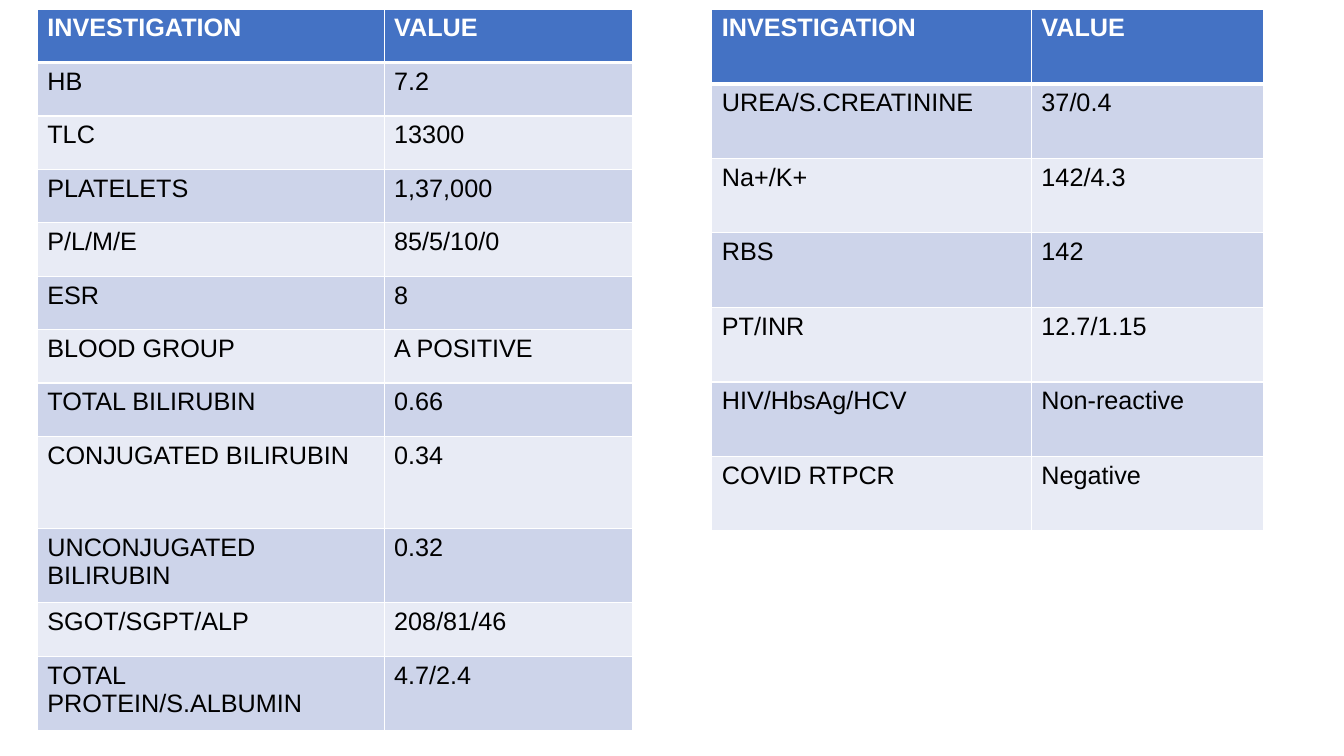
from lxml import etree
from pptx import Presentation
from pptx.dml.color import RGBColor
from pptx.oxml.ns import qn
from pptx.util import Inches, Pt

HEADER_FILL = "4472C4"
BAND_FILLS = ("CDD4EA", "E8EBF5")
WHITE, BLACK = "FFFFFF", "000000"
HEADINGS = ("INVESTIGATION", "VALUE")
SHORT_ROW, TALL_ROW, EXTRA_ROW = 0.53, 0.74, 0.91

# Each result: investigation, value, row height
BLOOD_AND_LIVER = [
    ("HB", "7.2", SHORT_ROW),
    ("TLC", "13300", SHORT_ROW),
    ("PLATELETS", "1,37,000", SHORT_ROW),
    ("P/L/M/E", "85/5/10/0", SHORT_ROW),
    ("ESR", "8", SHORT_ROW),
    ("BLOOD GROUP", "A POSITIVE", SHORT_ROW),
    ("TOTAL BILIRUBIN", "0.66", SHORT_ROW),
    ("CONJUGATED BILIRUBIN", "0.34", EXTRA_ROW),
    ("UNCONJUGATED BILIRUBIN", "0.32", TALL_ROW),
    ("SGOT/SGPT/ALP", "208/81/46", SHORT_ROW),
    ("TOTAL PROTEIN/S.ALBUMIN", "4.7/2.4", TALL_ROW),
]
RENAL_AND_SEROLOGY = [
    ("UREA/S.CREATININE", "37/0.4", TALL_ROW),
    ("Na+/K+", "142/4.3", TALL_ROW),
    ("RBS", "142", TALL_ROW),
    ("PT/INR", "12.7/1.15", TALL_ROW),
    ("HIV/HbsAg/HCV", "Non-reactive", TALL_ROW),
    ("COVID RTPCR", "Negative", TALL_ROW),
]


def rgb(hex_color):
    return RGBColor.from_string(hex_color)


def write(frame, text, size=18, font="Arial", color=BLACK, bold=False):
    run = frame.paragraphs[0].add_run()
    run.text = text
    run.font.size, run.font.name, run.font.bold = Pt(size), font, bold
    run.font.color.rgb = rgb(color)


def add_borders(cell, **widths):
    """Draw white borders; widths are points keyed by side: L, R, T, B."""
    properties = cell._tc.get_or_add_tcPr()
    for side, width in widths.items():
        border = etree.SubElement(properties, qn(f"a:ln{side}"), w=str(Pt(width)))
        fill = etree.SubElement(border, qn("a:solidFill"))
        etree.SubElement(fill, qn("a:srgbClr"), val=WHITE)


def add_results_table(slide, left, top, column_widths, results, header_height):
    rows = [(*HEADINGS, header_height), *results]
    height = sum(row[-1] for row in rows)
    table = slide.shapes.add_table(
        len(rows), len(HEADINGS), Inches(left), Inches(top),
        Inches(sum(column_widths)), Inches(height)).table
    for column, width in zip(table.columns, column_widths):
        column.width = Inches(width)

    for index, (*texts, row_height) in enumerate(rows):
        is_header = index == 0
        table.rows[index].height = Inches(row_height)
        for column_index, text in enumerate(texts):
            cell = table.cell(index, column_index)
            # A thick rule separates the header from the results
            add_borders(cell, L=1, R=1, T=3 if index == 1 else 1,
                        B=3 if is_header else 1)
            cell.fill.solid()
            cell.fill.fore_color.rgb = rgb(
                HEADER_FILL if is_header else BAND_FILLS[(index - 1) % 2])
            write(cell.text_frame, text, bold=is_header,
                  color=WHITE if is_header else BLACK)


def main():
    deck = Presentation()
    deck.slide_width, deck.slide_height = Inches(13.33), Inches(7.5)
    slide = deck.slides.add_slide(deck.slide_layouts[6])

    # Left: blood count and liver function
    add_results_table(slide, 0.37, 0.09, (3.44, 2.46), BLOOD_AND_LIVER, SHORT_ROW)
    # Right: renal function, coagulation and serology
    add_results_table(slide, 7.06, 0.09, (3.17, 2.3), RENAL_AND_SEROLOGY, TALL_ROW)

    deck.save("out.pptx")


if __name__ == "__main__":
    main()
